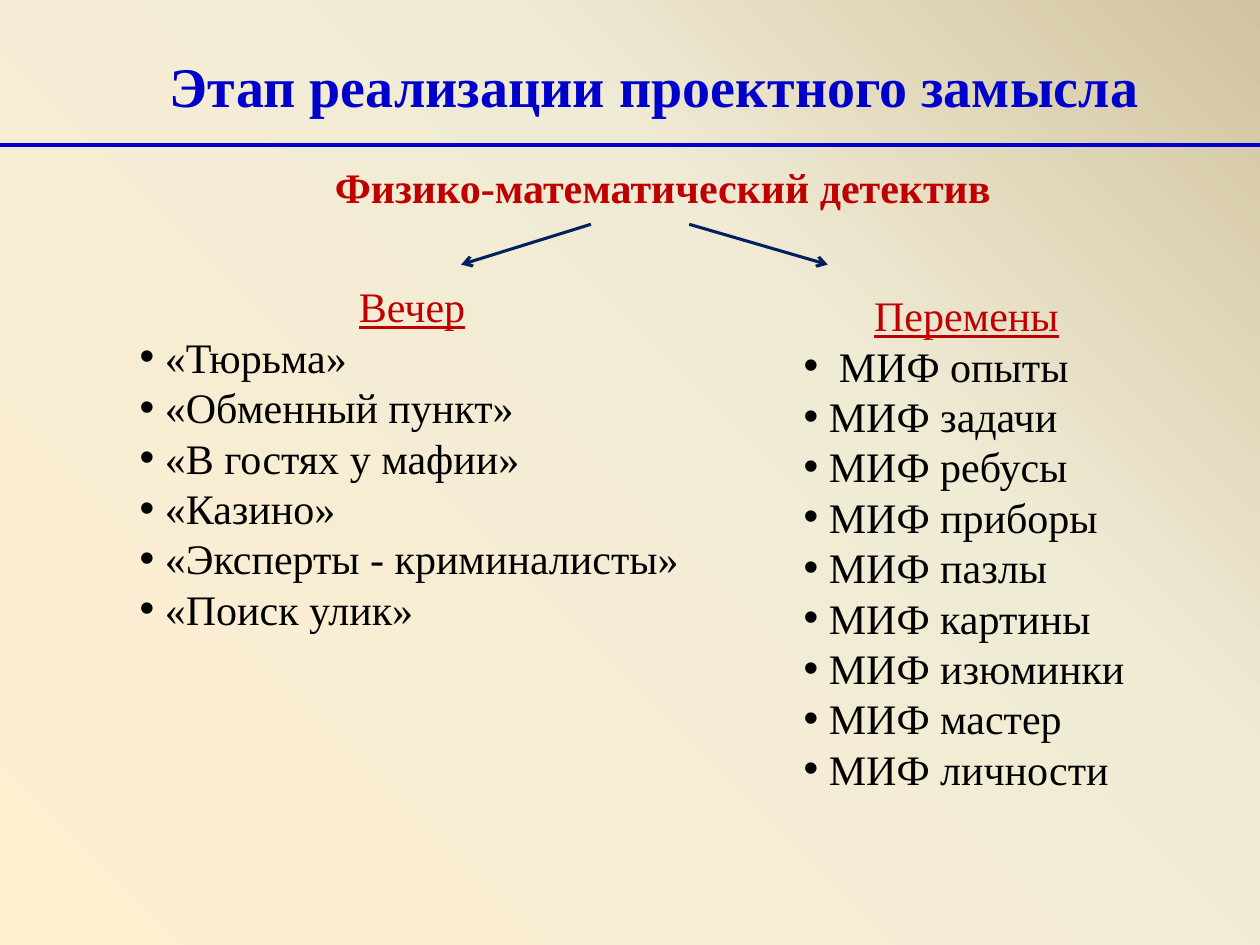
from lxml.etree import SubElement as Sub
from pptx import Presentation
from pptx.dml.color import RGBColor
from pptx.enum.shapes import MSO_CONNECTOR as Conn
from pptx.enum.text import PP_ALIGN as Align
from pptx.oxml.ns import qn
from pptx.util import Inches, Pt

BLUE, RED, NAVY, BLACK = "0000CC", "C00000", "002060", "000000"


def color(code):
    return RGBColor.from_string(code)


class Deck:
    font = "Times New Roman"
    size = 24

    def __init__(self):
        self.prs = Presentation()
        self.prs.slide_width = Inches(10)
        self.prs.slide_height = Inches(7.5)
        self.slide = self.prs.slides.add_slide(self.prs.slide_layouts[6])

    def backdrop(self, stops):
        """Radial gradient that spreads from the lower left corner."""
        self.slide.background.fill.gradient()
        grad = self.slide.element.find(".//" + qn("a:gradFill"))
        for part in list(grad):
            grad.remove(part)
        items = Sub(grad, qn("a:gsLst"))
        for pos, code in stops:
            stop = Sub(items, qn("a:gs"), pos=str(pos * 1000))
            Sub(stop, qn("a:srgbClr"), val=code)
        ring = Sub(grad, qn("a:path"), path="circle")
        Sub(ring, qn("a:fillToRect"), t="100000", r="100000")

    def frame(self, x, y, w, h):
        box = self.slide.shapes.add_textbox(
            Inches(x), Inches(y), Inches(w), Inches(h))
        box.text_frame.word_wrap = True
        return box.text_frame

    def style(self, para, code, size=None, bold=False, under=False):
        font = para.font
        font.name, font.size = self.font, Pt(size or self.size)
        font.bold, font.underline = bold, under
        font.color.rgb = color(code)

    def text(self, words, area, code, size=None, align=Align.LEFT):
        para = self.frame(*area).paragraphs[0]
        para.text, para.alignment = words, align
        self.style(para, code, size, bold=True)

    def bullet(self, para, gap):
        props = para._p.get_or_add_pPr()
        props.set("marL", str(Inches(gap)))
        props.set("indent", str(-Inches(gap)))
        Sub(props, qn("a:buFont"), typeface="Arial")
        Sub(props, qn("a:buChar"), char="•")

    def group(self, head, items, area, gaps):
        frame = self.frame(*area)
        top = frame.paragraphs[0]
        top.text, top.alignment = head, Align.CENTER
        self.style(top, RED, under=True)
        for item, gap in zip(items, gaps):
            para = frame.add_paragraph()
            para.text = item
            self.bullet(para, gap)
            self.style(para, BLACK)

    def line(self, start, end, code, width, arrow=False):
        ends = [Inches(v) for v in (*start, *end)]
        link = self.slide.shapes.add_connector(Conn.STRAIGHT, *ends)
        link.line.color.rgb = color(code)
        link.line.width = Pt(width)
        if arrow:
            Sub(link.line._get_or_add_ln(), qn("a:tailEnd"), type="arrow")
        Sub(link._element.spPr, qn("a:effectLst"))


def main():
    deck = Deck()
    deck.backdrop([(0, "FFEFD1"), (65, "F0EBD5"), (100, "D1C39F")])

    # Title and rule
    deck.text("Этап реализации проектного замысла",
              (0.39, 0.36, 9.61, 1.72), BLUE, 32, Align.CENTER)
    deck.line((0, 1.15), (10, 1.15), BLUE, 2.25)

    # Topic and its two branches
    deck.text("Физико-математический детектив",
              (2.56, 1.23, 5.46, 0.5), RED)
    for start, end in ((4.69, 3.66), (5.47, 6.57)):
        deck.line((start, 1.78), (end, 2.1), NAVY, 1.75, arrow=True)

    # Evening games
    games = ["Тюрьма", "Обменный пункт", "В гостях у мафии", "Казино",
             "Эксперты - криминалисты", "Поиск улик"]
    deck.group("Вечер", [f"«{name}»" for name in games],
               (1.01, 2.18, 4.52, 3.33), [0.2] * len(games))

    # Break activities, the first set slightly further in
    tasks = ["опыты", "задачи", "ребусы", "приборы", "пазлы", "картины",
             "изюминки", "мастер", "личности"]
    deck.group("Перемены", [f"МИФ {name}" for name in tasks],
               (6.28, 2.25, 2.78, 4.54), [0.28] + [0.2] * (len(tasks) - 1))

    deck.prs.save("out.pptx")


if __name__ == "__main__":
    main()
